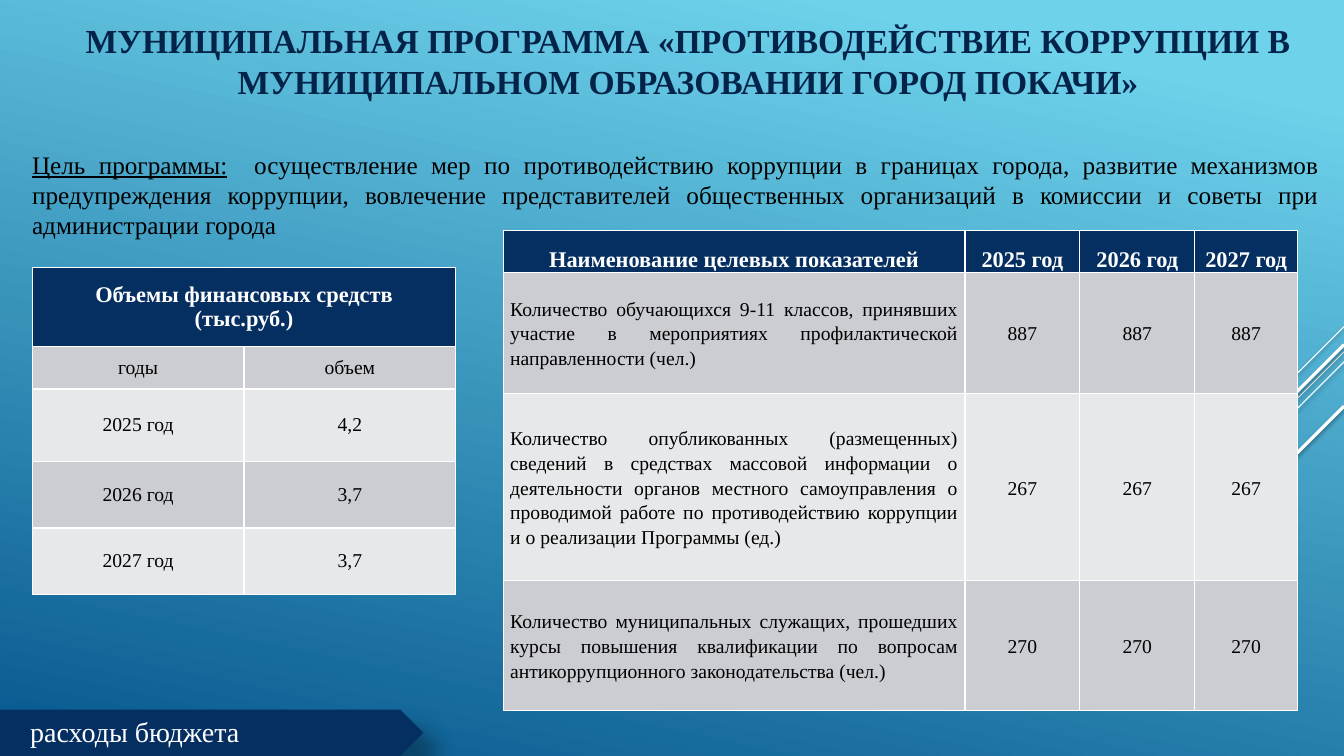
from lxml import etree
from pptx import Presentation
from pptx import util as u
from pptx.dml import color
from pptx.enum import shapes, text
from pptx.oxml import ns

PX = 9144  # 100 px to the inch
FONT = "Times New Roman"
NAVY, WHITE, BLACK = "052F61", "FFFFFF", "000000"
BANDS = ["CCCDD2", "E7E8EA"]
CENTER, JUSTIFY = text.PP_ALIGN.CENTER, text.PP_ALIGN.JUSTIFY
MIDDLE, BOTTOM = text.MSO_ANCHOR.MIDDLE, text.MSO_ANCHOR.BOTTOM


def style(font, size, hex_color, bold=False):
    font.name, font.size, font.bold = FONT, u.Pt(size), bold
    font.color.rgb = color.RGBColor.from_string(hex_color)


def add_shadow(shape, blur, distance, angle, opacity):
    """Blur and distance are in points, the angle in degrees, opacity in percent."""
    properties = shape._element.spPr
    effects = etree.SubElement(properties, ns.qn("a:effectLst"))
    shadow = etree.SubElement(
        effects, ns.qn("a:outerShdw"), blurRad=str(u.Pt(blur)), dist=str(u.Pt(distance)),
        dir=str(angle * 60000), algn="tl", rotWithShape="0")
    tint = etree.SubElement(shadow, ns.qn("a:srgbClr"), val=BLACK)
    etree.SubElement(tint, ns.qn("a:alpha"), val=str(opacity * 1000))


presentation = Presentation()
presentation.slide_width, presentation.slide_height = 1333 * PX, 750 * PX
slide = presentation.slides.add_slide(presentation.slide_layouts[5])

background = slide.background.fill
background.gradient()
background.gradient_angle = 258
for stop, position, hex_color in zip(background.gradient_stops, (0.1, 1), ("6ED2EB", "06588E")):
    stop.position = position
    stop.color.rgb = color.RGBColor.from_string(hex_color)

# Diagonal lines rising to the right edge: top, length along each axis, weight
for top, run, weight in [(324, 100, 0.75), (349, 326, 0.75), (359, 207, 0.75),
                         (342, 191, 2.25), (403, 139, 2.25)]:
    line = slide.shapes.add_connector(
        shapes.MSO_CONNECTOR.STRAIGHT, 1333 * PX, top * PX, (1333 - run) * PX, (top + run) * PX)
    line.line.color.rgb = color.RGBColor.from_string(WHITE)
    line.line.width = u.Pt(weight)
    add_shadow(line, 3.1, 1.6, 90, 38)

title = slide.shapes.title
title.left, title.top, title.width, title.height = 32 * PX, 12 * PX, 1301 * PX, 118 * PX
title.text_frame.text = ("МУНИЦИПАЛЬНАЯ ПРОГРАММА «ПРОТИВОДЕЙСТВИЕ КОРРУПЦИИ В "
                         "МУНИЦИПАЛЬНОМ ОБРАЗОВАНИИ ГОРОД ПОКАЧИ»")
title.text_frame.vertical_anchor = text.MSO_ANCHOR.TOP
title.text_frame.margin_top = 8 * PX
title.text_frame.paragraphs[0].alignment = CENTER
style(title.text_frame.paragraphs[0].font, 24, "042349", True)

funding = [
    ["Объемы финансовых средств (тыс.руб.)", ""],
    ["годы", "объем"],
    ["2025 год", "4,2"],
    ["2026 год", "3,7"],
    ["2027 год", "3,7"],
]
indicators = [
    ["Наименование целевых показателей", "2025 год", "2026 год", "2027 год"],
    ["Количество обучающихся 9-11 классов, принявших участие в мероприятиях "
     "профилактической направленности (чел.)"] + ["887"] * 3,
    ["Количество опубликованных (размещенных) сведений в средствах массовой информации "
     "о деятельности органов местного самоуправления о проводимой работе по "
     "противодействию коррупции и о реализации Программы (ед.)"] + ["267"] * 3,
    ["Количество муниципальных служащих, прошедших курсы повышения квалификации по "
     "вопросам антикоррупционного законодательства (чел.)"] + ["270"] * 3,
]
# Rows, left, top, column widths, row heights, side margin, top margin, is indicator table
tables = [
    (funding, 32, 265, [210, 210], [79, 42, 72, 66, 66], 13, 5, False),
    (indicators, 499, 229, [458, 114, 114, 102], [41, 120, 186, 129], 7, 0, True),
]
for rows, left, top, widths, heights, side, edge, is_indicators in tables:
    table = slide.shapes.add_table(
        len(rows), len(widths), left * PX, top * PX, sum(widths) * PX, sum(heights) * PX).table
    for column, width in zip(table.columns, widths):
        column.width = width * PX
    for row, height in zip(table.rows, heights):
        row.height = height * PX
    for r, values in enumerate(rows):
        for c, value in enumerate(values):
            cell = table.cell(r, c)
            cell.fill.solid()
            cell.fill.fore_color.rgb = color.RGBColor.from_string(
                BANDS[(r - 1) % 2] if r else NAVY)
            cell.margin_left = cell.margin_right = side * PX
            cell.margin_top = cell.margin_bottom = edge * PX
            cell.vertical_anchor = BOTTOM if is_indicators and r == 0 else MIDDLE
            cell.text = value
            paragraph = cell.text_frame.paragraphs[0]
            paragraph.alignment = CENTER
            if is_indicators:
                paragraph.line_spacing = 1.15
                if r and c == 0:
                    paragraph.alignment = JUSTIFY
                else:
                    paragraph.space_after = u.Pt(10)
            style(paragraph.font, 14 if r else 16, BLACK if r else WHITE, r == 0)
    if not is_indicators:
        table.cell(0, 0).merge(table.cell(0, 1))

goal = slide.shapes.add_textbox(22 * PX, 143 * PX, 1296 * PX, 101 * PX)
goal.text_frame.word_wrap = True
paragraph = goal.text_frame.paragraphs[0]
paragraph.alignment = JUSTIFY
style(paragraph.font, 18, BLACK)
label = paragraph.add_run()
label.text = "Цель программы:"
label.font.underline = True
paragraph.add_run().text = (
    "  осуществление мер по противодействию коррупции в границах города, развитие "
    "механизмов предупреждения коррупции, вовлечение представителей общественных "
    "организаций в комиссии и советы при администрации города")

footer = slide.shapes.add_shape(
    shapes.MSO_SHAPE.PENTAGON, 0, 704 * PX, 420 * PX, 46 * PX)
footer.fill.solid()
footer.fill.fore_color.rgb = color.RGBColor.from_string(NAVY)
footer.line.fill.background()
add_shadow(footer, 15, 18, 45, 30)

caption = slide.shapes.add_textbox(20 * PX, 704 * PX, 378 * PX, 44 * PX)
caption.text_frame.word_wrap = True
caption.text_frame.text = "расходы бюджета"
style(caption.text_frame.paragraphs[0].font, 20, WHITE)

presentation.save("out.pptx")
